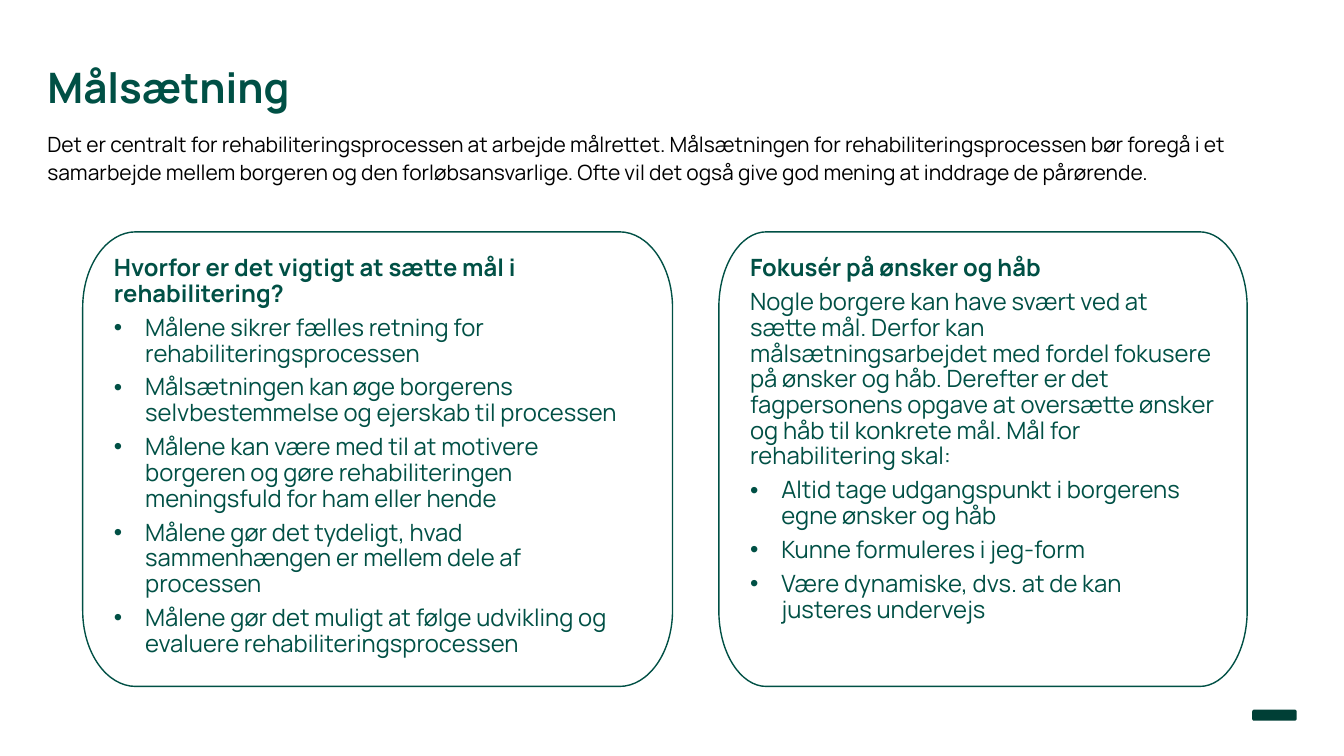
from lxml import etree
from pptx import Presentation
from pptx.dml.color import RGBColor
from pptx.enum.shapes import MSO_SHAPE
from pptx.enum.text import MSO_ANCHOR, MSO_AUTO_SIZE, PP_ALIGN
from pptx.oxml.ns import qn
from pptx.util import Inches, Pt

GREEN = RGBColor(0x00, 0x50, 0x45)
DARK_GREEN = RGBColor(0x00, 0x3F, 0x36)
BLACK = RGBColor(0x00, 0x00, 0x00)
WHITE = RGBColor(0xFF, 0xFF, 0xFF)
FONT = "Manrope"
TOP = MSO_ANCHOR.TOP
LEFT = PP_ALIGN.LEFT
NO_AUTOFIT = MSO_AUTO_SIZE.NONE
ROUNDED_RECTANGLE = MSO_SHAPE.ROUNDED_RECTANGLE

MARGIN = 0.47
PANEL_TOP, PANEL_HEIGHT = 2.3, 4.51
BULLET_INDENT = 0.31
CURVE_PULL = 0.55

INTRO = (
    "Det er centralt for rehabiliteringsprocessen at arbejde målrettet. "
    "Målsætningen for rehabiliteringsprocessen bør foregå i et samarbejde "
    "mellem borgeren og den forløbsansvarlige. Ofte vil det også give god "
    "mening at inddrage de pårørende."
)
WHY_HEADING = "Hvorfor er det vigtigt at sætte mål i rehabilitering?"
WHY_BULLETS = [
    "Målene sikrer fælles retning for rehabiliteringsprocessen",
    "Målsætningen kan øge borgerens selvbestemmelse og ejerskab til processen",
    "Målene kan være med til at motivere borgeren og gøre rehabiliteringen "
    "meningsfuld for ham eller hende",
    "Målene gør det tydeligt, hvad sammenhængen er mellem dele af processen",
    "Målene gør det muligt at følge udvikling og evaluere "
    "rehabiliteringsprocessen",
]
WISHES_HEADING = "Fokusér på ønsker og håb"
WISHES_TEXT = (
    "Nogle borgere kan have svært ved at sætte mål. Derfor kan "
    "målsætningsarbejdet med fordel fokusere på ønsker og håb. Derefter er det "
    "fagpersonens opgave at oversætte ønsker og håb til konkrete mål. Mål for "
    "rehabilitering skal:"
)
WISHES_BULLETS = [
    "Altid tage udgangspunkt i borgerens egne ønsker og håb",
    "Kunne formuleres i jeg-form",
    "Være dynamiske, dvs. at de kan justeres undervejs",
]


def prepare_frame(text_frame, inset_x=0, inset_y=0):
    text_frame.word_wrap = True
    text_frame.auto_size = NO_AUTOFIT
    text_frame.vertical_anchor = TOP
    text_frame.margin_left = text_frame.margin_right = Inches(inset_x)
    text_frame.margin_top = text_frame.margin_bottom = Inches(inset_y)


def write_paragraph(paragraph, text, size, color, line_spacing, bold=False):
    paragraph.text = text
    paragraph.alignment = LEFT
    paragraph.line_spacing = line_spacing
    paragraph.space_before = Pt(0)
    font = paragraph.runs[0].font
    font.name = FONT
    font.size = Pt(size)
    font.bold = bold
    font.color.rgb = color


def add_bullet(paragraph):
    properties = paragraph._p.get_or_add_pPr()
    properties.set("marL", str(Inches(BULLET_INDENT)))
    properties.set("indent", str(-Inches(BULLET_INDENT)))
    etree.SubElement(properties, qn("a:buFont"), typeface="Arial")
    etree.SubElement(properties, qn("a:buChar"), char="•")


def add_title(slide, text, left, top, width, height):
    title = slide.shapes.title
    title.left, title.top = Inches(left), Inches(top)
    title.width, title.height = Inches(width), Inches(height)
    prepare_frame(title.text_frame)
    write_paragraph(title.text_frame.paragraphs[0], text, 30, GREEN, 0.83, True)


def add_intro(slide, text, left, top, width, height):
    box = slide.shapes.add_textbox(
        Inches(left), Inches(top), Inches(width), Inches(height))
    prepare_frame(box.text_frame)
    write_paragraph(box.text_frame.paragraphs[0], text, 15, BLACK, 1.1)


def round_corner(segment, start, end, corner):
    curve = etree.Element(qn("a:cubicBezTo"))
    controls = [
        [round(a + (c - a) * CURVE_PULL) for a, c in zip(point, corner)]
        for point in (start, end)
    ]
    for x, y in [*controls, end]:
        etree.SubElement(curve, qn("a:pt"), x=str(x), y=str(y))
    segment.getparent().replace(segment, curve)


def add_rounded_outline(slide, left, top, width, height):
    right, bottom = Inches(width), Inches(height)
    radius_x, radius_y = round(right * 0.09), round(bottom / 6)
    points = [
        (0, radius_y), (radius_x, 0),
        (right - radius_x, 0), (right, radius_y),
        (right, bottom - radius_y), (right - radius_x, bottom),
        (radius_x, bottom), (0, bottom - radius_y),
    ]
    corners = [(0, 0), (right, 0), (right, bottom), (0, bottom)]
    builder = slide.shapes.build_freeform(*points[0])
    builder.add_line_segments(points[1:], close=True)
    outline = builder.convert_to_shape(Inches(left), Inches(top))
    segments = list(outline._element.iter(qn("a:lnTo")))
    for index, corner in enumerate(corners):
        start, end = points[2 * index:2 * index + 2]
        round_corner(segments[2 * index], start, end, corner)
    return outline


def add_panel(slide, heading, body, bullets, left, top, width, height):
    panel = add_rounded_outline(slide, left, top, width, height)
    panel.shadow.inherit = False
    panel.fill.solid()
    panel.fill.fore_color.rgb = WHITE
    panel.line.color.rgb = GREEN
    panel.line.width = Pt(1)

    text_frame = panel.text_frame
    prepare_frame(text_frame, 0.31, 0.24)
    texts = [heading, *body, *bullets]
    first_bullet = len(texts) - len(bullets)
    for index, text in enumerate(texts):
        paragraph = text_frame.add_paragraph() if index else text_frame.paragraphs[0]
        write_paragraph(paragraph, text, 17, GREEN, 0.9, index == 0)
        paragraph.space_after = Pt(5.9)
        if index >= first_bullet:
            add_bullet(paragraph)


def add_corner_mark(slide, left, top, width, height):
    mark = slide.shapes.add_shape(
        ROUNDED_RECTANGLE, Inches(left), Inches(top), Inches(width), Inches(height))
    mark.shadow.inherit = False
    mark.fill.solid()
    mark.fill.fore_color.rgb = DARK_GREEN
    mark.line.fill.background()


def main():
    presentation = Presentation()
    presentation.slide_width = Inches(13.33)
    presentation.slide_height = Inches(7.5)
    slide = presentation.slides.add_slide(
        presentation.slide_layouts.get_by_name("Title Only"))

    add_corner_mark(slide, 12.42, 7.04, 0.44, 0.11)
    add_intro(slide, INTRO, MARGIN, 1.28, 12.36, 1.07)
    add_title(slide, "Målsætning", MARGIN, 0.69, 9.19, 0.51)
    add_panel(slide, WISHES_HEADING, [WISHES_TEXT], WISHES_BULLETS,
              7.13, PANEL_TOP, 5.24, PANEL_HEIGHT)
    add_panel(slide, WHY_HEADING, [], WHY_BULLETS,
              0.82, PANEL_TOP, 5.85, PANEL_HEIGHT)
    presentation.save("out.pptx")


if __name__ == "__main__":
    main()
